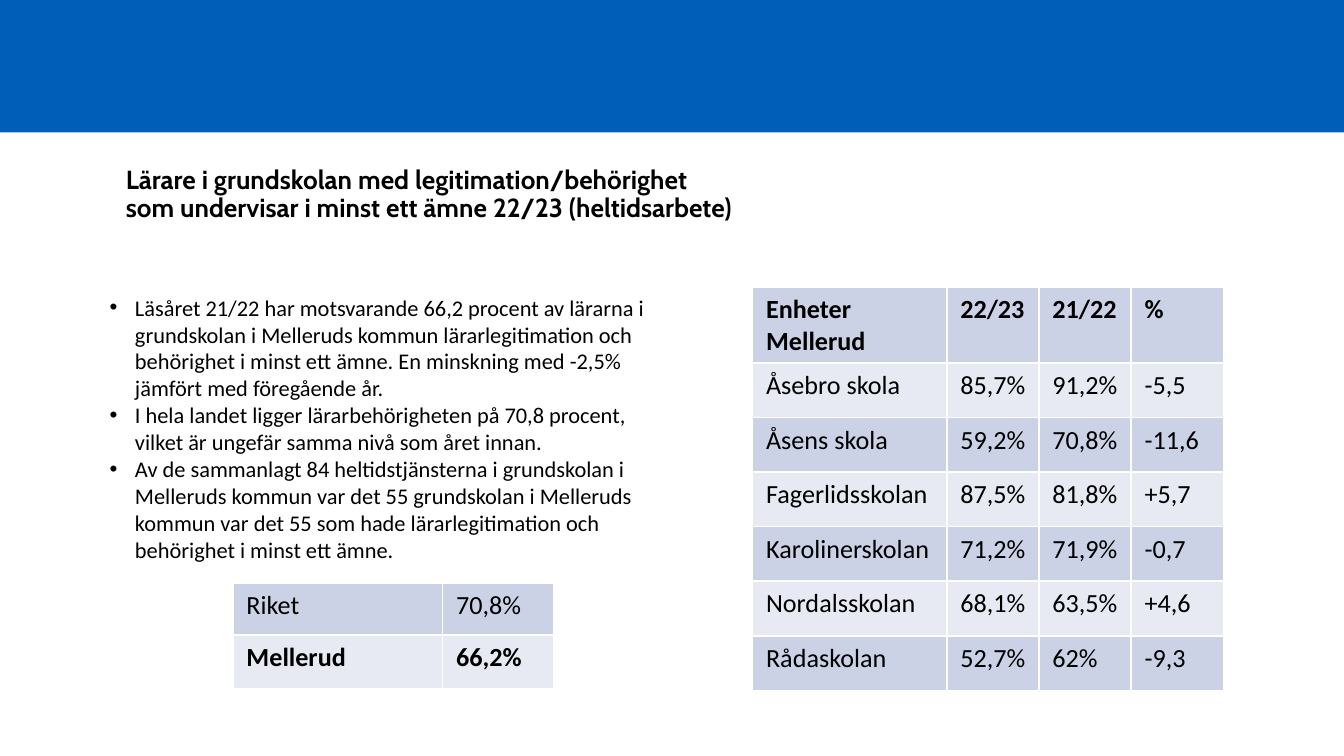
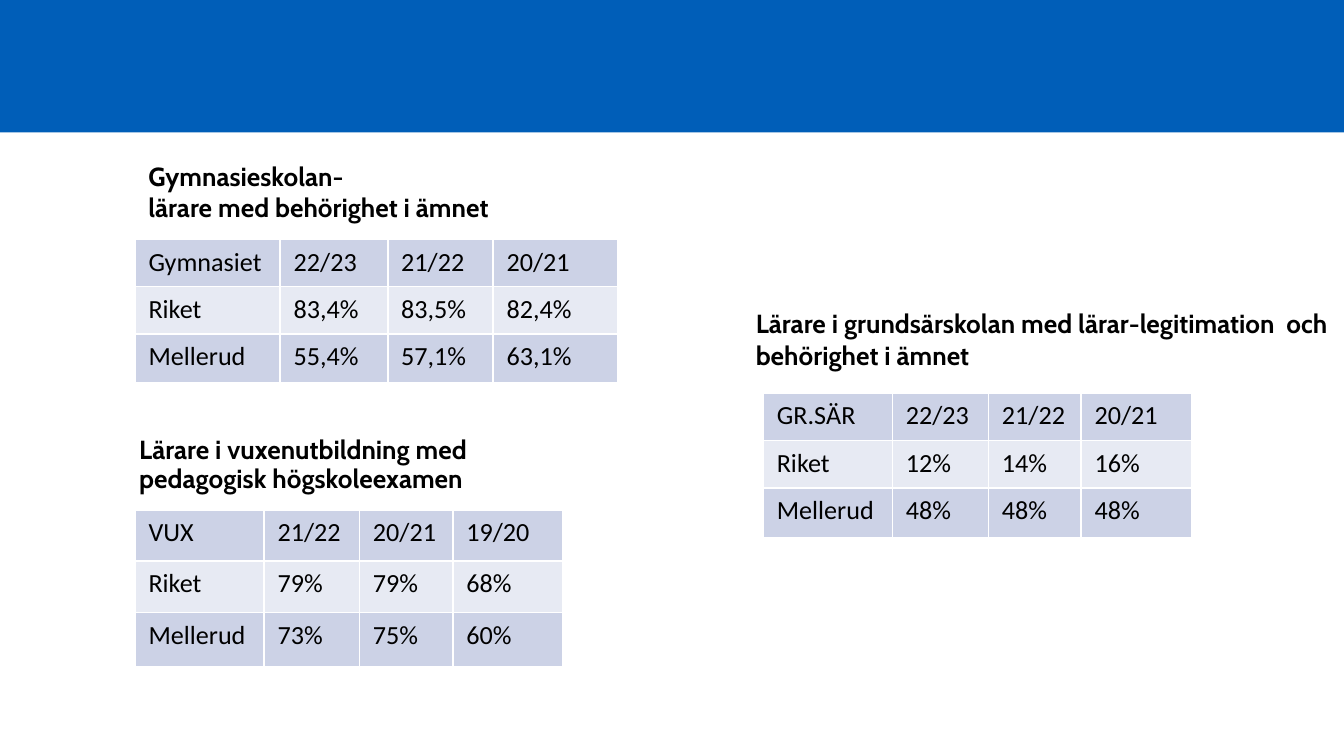
import lxml.etree
import pptx
import pptx.dml.color
import pptx.enum.shapes
import pptx.enum.text
import pptx.oxml.ns
import pptx.util

COLORS = {
    "band": "005EB8",
    "text": "000000",
    "border": "FFFFFF",
    "odd row": "CCD2E6",
    "even row": "E7EAF3",
}
HEADING_FONT = "Cabin"
BODY_FONT = "Calibri"
COLOR = {name: pptx.dml.color.RGBColor.from_string(value) for name, value in COLORS.items()}

presentation = pptx.Presentation()
presentation.slide_width = pptx.util.Inches(10)
presentation.slide_height = presentation.slide_width * 9 // 16
CELL = presentation.slide_width // 100  # square grid, 100 columns across the slide


def write_heading(shape, position, lines, line_spacing=1.0):
    """Place a shape on the grid and fill it with bold heading lines."""
    shape.left, shape.top, shape.width, shape.height = [round(n * CELL) for n in position]
    shape.text_frame.word_wrap = True
    paragraph = shape.text_frame.paragraphs[0]
    paragraph.alignment = pptx.enum.text.PP_ALIGN.LEFT
    paragraph.line_spacing = line_spacing
    for index, line in enumerate(lines):
        if index:
            paragraph.add_line_break()
        run = paragraph.add_run()
        run.text = line
        run.font.name = HEADING_FONT
        run.font.size = pptx.util.Pt(14)
        run.font.bold = True
        run.font.color.rgb = COLOR["text"]


def add_banded_table(slide, left, top, columns, heights, rows, bold_row=None):
    """Add a table; left, top, columns and heights are in grid cells."""
    frame = slide.shapes.add_table(
        len(rows), len(columns), round(left * CELL), round(top * CELL),
        round(sum(columns) * CELL), round(sum(heights) * CELL))
    table = frame.table
    table.first_row = False
    table.horz_banding = False
    for column, width in zip(table.columns, columns):
        column.width = round(width * CELL)
    for row_index, values in enumerate(rows):
        table.rows[row_index].height = round(heights[row_index] * CELL)
        for column_index, value in enumerate(values):
            cell = table.cell(row_index, column_index)
            cell.fill.solid()
            cell.fill.fore_color.rgb = COLOR["even row" if row_index % 2 else "odd row"]
            run = cell.text_frame.paragraphs[0].add_run()
            run.text = value
            run.font.name = BODY_FONT
            run.font.size = pptx.util.Pt(14)
            run.font.bold = row_index == bold_row
            run.font.color.rgb = COLOR["text"]
            properties = cell._tc.get_or_add_tcPr()
            for index, side in enumerate(("lnL", "lnR", "lnT", "lnB")):
                line = lxml.etree.Element(pptx.oxml.ns.qn(f"a:{side}"), w=str(pptx.util.Pt(1)))
                fill = lxml.etree.SubElement(line, pptx.oxml.ns.qn("a:solidFill"))
                lxml.etree.SubElement(fill, pptx.oxml.ns.qn("a:srgbClr"), val=COLORS["border"])
                properties.insert(index, line)


compulsory_slide = presentation.slides.add_slide(presentation.slide_layouts[1])
other_slide = presentation.slides.add_slide(presentation.slide_layouts[5])

# The band moves to the master, so that both slides share it
band = compulsory_slide.shapes.add_shape(
    pptx.enum.shapes.MSO_SHAPE.RECTANGLE, 0, 0, presentation.slide_width, round(9.85 * CELL))
band.shadow.inherit = False
band.fill.solid()
band.fill.fore_color.rgb = COLOR["band"]
band.line.fill.background()
presentation.slide_master.shapes[0].element.addprevious(band.element)

# Titles
titles = [
    (compulsory_slide, (8.36, 9.1, 92.2, 8),
     ["Lärare i grundskolan med legitimation/behörighet",
      "som undervisar i minst ett ämne 22/23 (heltidsarbete)"]),
    (other_slide, (9.36, 29.24, 31.9, 8),
     ["Lärare i vuxenutbildning med ", "pedagogisk högskoleexamen"]),
]
for slide, position, lines in titles:
    title = slide.shapes.title
    write_heading(title, position, lines, line_spacing=0.9)
    title.text_frame.vertical_anchor = pptx.enum.text.MSO_ANCHOR.BOTTOM
    title.text_frame.auto_size = pptx.enum.text.MSO_AUTO_SIZE.NONE

# Slide 1: compulsory school
add_banded_table(
    compulsory_slide, 17.34, 43.4, [15.6, 8.25], [3.84, 4.05],
    [["Riket", "70,8%"], ["Mellerud", "66,2%"]], bold_row=1)

schools = [
    ["Enheter Mellerud", "22/23", "21/22", "%"],
    ["Åsebro skola", "85,7%", "91,2%", "-5,5"],
    ["Åsens skola", "59,2%", "70,8%", "-11,6"],
    ["Fagerlidsskolan", "87,5%", "81,8%", "+5,7"],
    ["Karolinerskolan", "71,2%", "71,9%", "-0,7"],
    ["Nordalsskolan", "68,1%", "63,5%", "+4,6"],
    ["Rådaskolan", "52,7%", "62%", "-9,3"],
]
add_banded_table(
    compulsory_slide, 56, 21.34, [14.45] + [6.86] * 3, [4.06] * len(schools), schools, bold_row=0)

findings = [
    "Läsåret 21/22 har motsvarande 66,2 procent av lärarna i grundskolan i Melleruds kommun "
    "lärarlegitimation och behörighet i minst ett ämne. En minskning med -2,5% jämfört med "
    "föregående år.",
    "I hela landet ligger lärarbehörigheten på 70,8 procent, vilket är ungefär samma nivå "
    "som året innan.",
    "Av de sammanlagt 84 heltidstjänsterna i grundskolan i Melleruds kommun var det 55 "
    "grundskolan i Melleruds kommun var det 55 som hade lärarlegitimation och behörighet i "
    "minst ett ämne.",
]
body = compulsory_slide.placeholders[1]
body.left, body.top, body.width, body.height = [round(n * CELL) for n in (7.16, 21.36, 44.2, 21.2)]
body.text_frame.word_wrap = True
body.text_frame.auto_size = pptx.enum.text.MSO_AUTO_SIZE.SHAPE_TO_FIT_TEXT
for index, finding in enumerate(findings):
    paragraph = body.text_frame.add_paragraph() if index else body.text_frame.paragraphs[0]
    properties = paragraph._p.get_or_add_pPr()
    properties.set("marL", str(round(1.88 * CELL)))
    properties.set("indent", str(round(-1.88 * CELL)))
    lxml.etree.SubElement(properties, pptx.oxml.ns.qn("a:buFont"), typeface="Arial")
    lxml.etree.SubElement(properties, pptx.oxml.ns.qn("a:buChar"), char="•")
    paragraph.space_before = pptx.util.Pt(0)
    run = paragraph.add_run()
    run.text = finding
    run.font.name = BODY_FONT
    run.font.size = pptx.util.Pt(12)
    run.font.color.rgb = COLOR["text"]

# Slide 2: adult education, special school and upper secondary school
school_forms = [
    (10.05, 37.95, [9.6, 7.1, 6.95, 8.2], [3.8, 3.84, 4.05],
     [["VUX", "21/22", "20/21", "19/20"],
      ["Riket", "79%", "79%", "68%"],
      ["Mellerud", "73%", "75%", "60%"]]),
    (56.8, 29.25, [9.6, 7.15, 6.9, 8.2], [3.52, 3.52, 3.7],
     [["GR.SÄR", "22/23", "21/22", "20/21"],
      ["Riket", "12%", "14%", "16%"],
      ["Mellerud", "48%", "48%", "48%"]]),
    (10.05, 17.83, [10.8, 8, 7.85, 9.3], [3.5, 3.5, 3.65],
     [["Gymnasiet", "22/23", "21/22", "20/21"],
      ["Riket", "83,4%", "83,5%", "82,4%"],
      ["Mellerud", "55,4%", "57,1%", "63,1%"]]),
]
for left, top, columns, heights, rows in school_forms:
    add_banded_table(other_slide, left, top, columns, heights, rows)

captions = [
    ((55.25, 22.4, 46.2, 5.7),
     ["Lärare i grundsärskolan med lärar-legitimation  och behörighet i ämnet"]),
    ((10.05, 11.45, 50, 5.7), ["Gymnasieskolan- ", "lärare med behörighet i ämnet"]),
]
for position, lines in captions:
    caption = other_slide.shapes.add_textbox(0, 0, CELL, CELL)
    write_heading(caption, position, lines)
    caption.text_frame.auto_size = pptx.enum.text.MSO_AUTO_SIZE.SHAPE_TO_FIT_TEXT

presentation.save("out.pptx")
